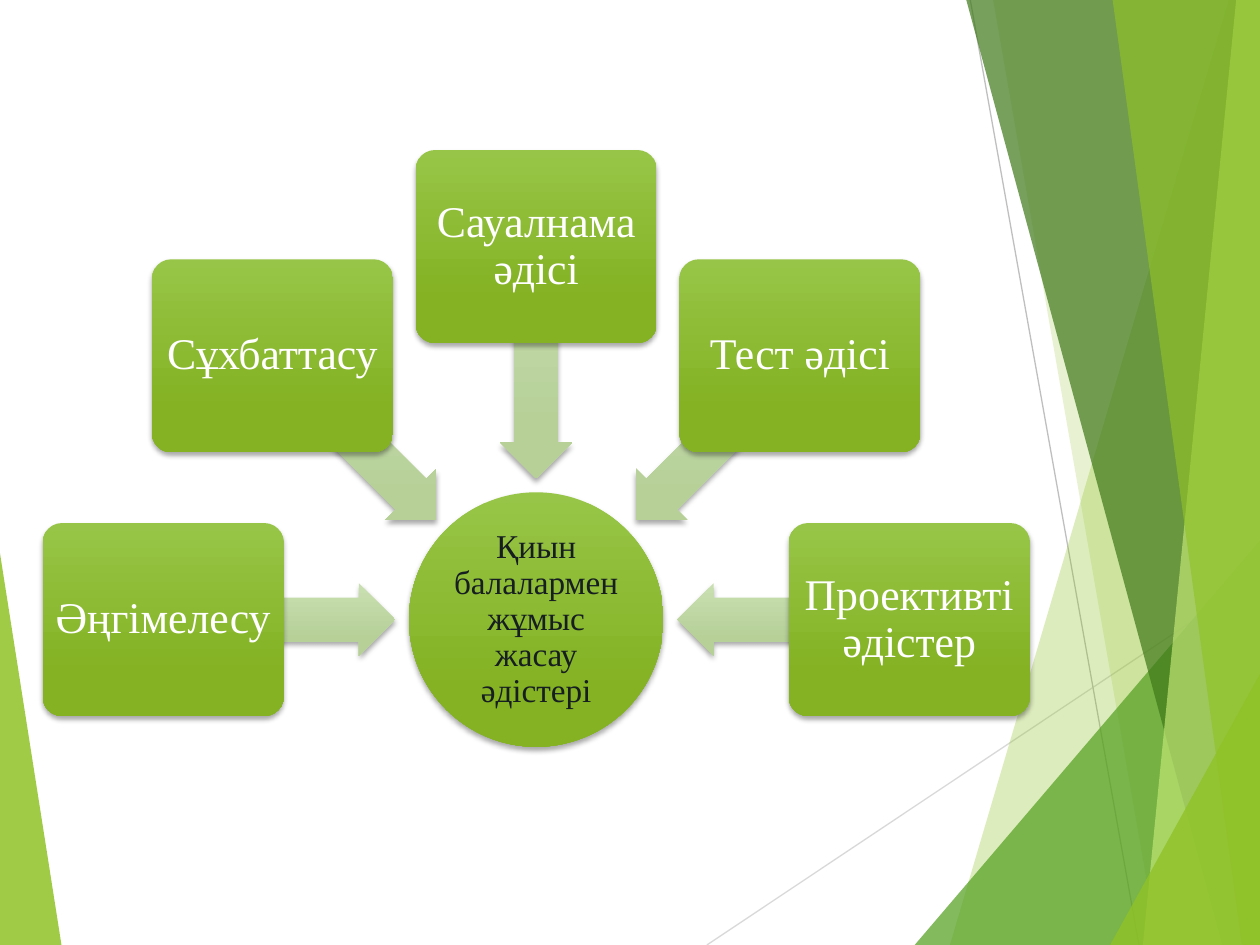
from math import cos, radians, sin

from lxml.etree import SubElement
from pptx import Presentation
from pptx.dml.color import RGBColor
from pptx.enum.shapes import MSO_CONNECTOR, MSO_SHAPE
from pptx.enum.text import MSO_ANCHOR, PP_ALIGN
from pptx.oxml.ns import qn
from pptx.util import Cm, Pt

FONT = "Times New Roman"
WHITE = RGBColor(0xFF, 0xFF, 0xFF)
INK = RGBColor(0x16, 0x1E, 0x22)
LIME = RGBColor(0x90, 0xC2, 0x26)
PALE_LIME = RGBColor(0xC0, 0xE4, 0x74)
GREEN = RGBColor(0x54, 0xA0, 0x21)
DARK_GREEN = RGBColor(0x3F, 0x78, 0x19)
LIGHT_GREY = RGBColor(0xD9, 0xD9, 0xD9)
GREY = RGBColor(0xBF, 0xBF, 0xBF)
NODE_GRADIENT = (RGBColor(0x97, 0xC5, 0x47), RGBColor(0x84, 0xB2, 0x23))
ARROW_GRADIENT = (RGBColor(0xC9, 0xDF, 0xB1), RGBColor(0xB6, 0xD0, 0x98))

# All lengths are in centimetres.
WIDTH, HEIGHT = 25.4, 19.05
HUB_X, HUB_Y, HUB_SIZE = 10.81, 12.49, 5.13
BOX_WIDTH, BOX_HEIGHT, BOX_RADIUS = 4.86, 3.89, 7.52
ARROW_LENGTH, ARROW_HEIGHT, ARROW_RADIUS = 4.67, 1.46, 5.18

HUB_TEXT = "Қиын балалармен жұмыс жасау әдістері"
METHODS = ["Әңгімелесу", "Сұхбаттасу", "Сауалнама әдісі",
           "Тест әдісі", "Проективті әдістер"]

# Slanted edge from top to bottom, the side it is closed along, colour, opacity
SHARDS = [
    ((0, 11.15), (1.24, HEIGHT), 0, LIME, 85),
    ((24.77, 0), (19.15, HEIGHT), WIDTH, LIME, 30),
    ((20.02, 0), (23.34, HEIGHT), WIDTH, LIME, 20),
    ((WIDTH, 10.9), (18.44, HEIGHT), WIDTH, GREEN, 72),
    ((19.48, 0), (24.64, HEIGHT), WIDTH, DARK_GREEN, 70),
    ((24.92, 0), (23.04, HEIGHT), WIDTH, PALE_LIME, 70),
    ((22.43, 0), (25.04, HEIGHT), WIDTH, LIME, 65),
    ((WIDTH, 13.59), (22.38, HEIGHT), WIDTH, LIME, 80),
]


def add_ray(slide, start, end, color):
    ray = slide.shapes.add_connector(
        MSO_CONNECTOR.STRAIGHT, *map(Cm, start), *map(Cm, end))
    ray.line.color.rgb = color
    ray.line.width = Pt(0.75)
    SubElement(ray._element.spPr, qn("a:effectLst"))


def add_shard(slide, top, bottom, side, color, opacity):
    corners = [bottom, (side, HEIGHT), (side, top[1])]
    builder = slide.shapes.build_freeform(*map(Cm, top))
    builder.add_line_segments([(Cm(x), Cm(y)) for x, y in corners])
    shard = builder.convert_to_shape()
    shard.shadow.inherit = False
    shard.line.fill.background()
    shard.fill.solid()
    shard.fill.fore_color.rgb = color
    rgb = shard._element.spPr.find(f"{qn('a:solidFill')}/{qn('a:srgbClr')}")
    SubElement(rgb, qn("a:alpha"), val=str(opacity * 1000))


def add_soft_shadow(shape):
    shape.shadow.inherit = False
    effects = shape._element.spPr.find(qn("a:effectLst"))
    shadow = SubElement(effects, qn("a:outerShdw"), blurRad=str(Pt(3)),
                        dist=str(Pt(2)), dir="5400000", rotWithShape="0")
    rgb = SubElement(shadow, qn("a:srgbClr"), val="000000")
    SubElement(rgb, qn("a:alpha"), val="35000")


def add_glossy_shape(slide, kind, center, size, gradient):
    """Add a shape around its centre, shaded from top to bottom."""
    (x, y), (width, height) = center, size
    shape = slide.shapes.add_shape(
        kind, Cm(x - width / 2), Cm(y - height / 2), Cm(width), Cm(height))
    shape.line.fill.background()
    shape.fill.gradient()
    shape.fill.gradient_angle = 270
    for stop, color, position in zip(shape.fill.gradient_stops, gradient, (0, 0.78)):
        stop.color.rgb = color
        stop.position = position
    shape._element.spPr.find(qn("a:gradFill")).set("rotWithShape", "0")
    add_soft_shadow(shape)
    return shape


def write_label(shape, text, size, color, margin):
    frame = shape.text_frame
    frame.word_wrap = True
    frame.vertical_anchor = MSO_ANCHOR.MIDDLE
    frame.margin_left = frame.margin_right = Cm(margin)
    frame.margin_top = frame.margin_bottom = Cm(margin)
    paragraph = frame.paragraphs[0]
    paragraph.alignment = PP_ALIGN.CENTER
    paragraph.line_spacing = 0.9
    run = paragraph.add_run()
    run.text = text
    run.font.name = FONT
    run.font.size = Pt(size)
    run.font.color.rgb = color


def around_hub(radius, angle):
    """Point at a clockwise angle, counted from the left of the hub."""
    turn = radians(angle)
    return HUB_X - radius * cos(turn), HUB_Y - radius * sin(turn)


def add_hub(slide):
    hub = add_glossy_shape(slide, MSO_SHAPE.OVAL, (HUB_X, HUB_Y),
                           (HUB_SIZE, HUB_SIZE), NODE_GRADIENT)
    write_label(hub, HUB_TEXT, 19, INK, 0.03)


def add_method(slide, text, angle):
    arrow = add_glossy_shape(slide, MSO_SHAPE.LEFT_ARROW,
                             around_hub(ARROW_RADIUS, angle),
                             (ARROW_LENGTH, ARROW_HEIGHT), ARROW_GRADIENT)
    arrow.adjustments[0] = 0.6
    arrow.rotation = (180 + angle) % 360
    box = add_glossy_shape(slide, MSO_SHAPE.ROUNDED_RECTANGLE,
                           around_hub(BOX_RADIUS, angle),
                           (BOX_WIDTH, BOX_HEIGHT), NODE_GRADIENT)
    box.adjustments[0] = 0.1
    write_label(box, text, 25, WHITE, 0.12)


def main():
    deck = Presentation()
    deck.slide_width, deck.slide_height = Cm(WIDTH), Cm(HEIGHT)
    slide = deck.slides.add_slide(deck.slide_layouts[6])

    add_ray(slide, (14.25, HEIGHT), (WIDTH, 11.61), LIGHT_GREY)
    add_ray(slide, (19.56, 0), (22.96, HEIGHT), GREY)
    for shard in SHARDS:
        add_shard(slide, *shard)

    add_hub(slide)
    step = 180 / (len(METHODS) - 1)
    for index, text in enumerate(METHODS):
        add_method(slide, text, index * step)

    deck.save("out.pptx")


if __name__ == "__main__":
    main()
